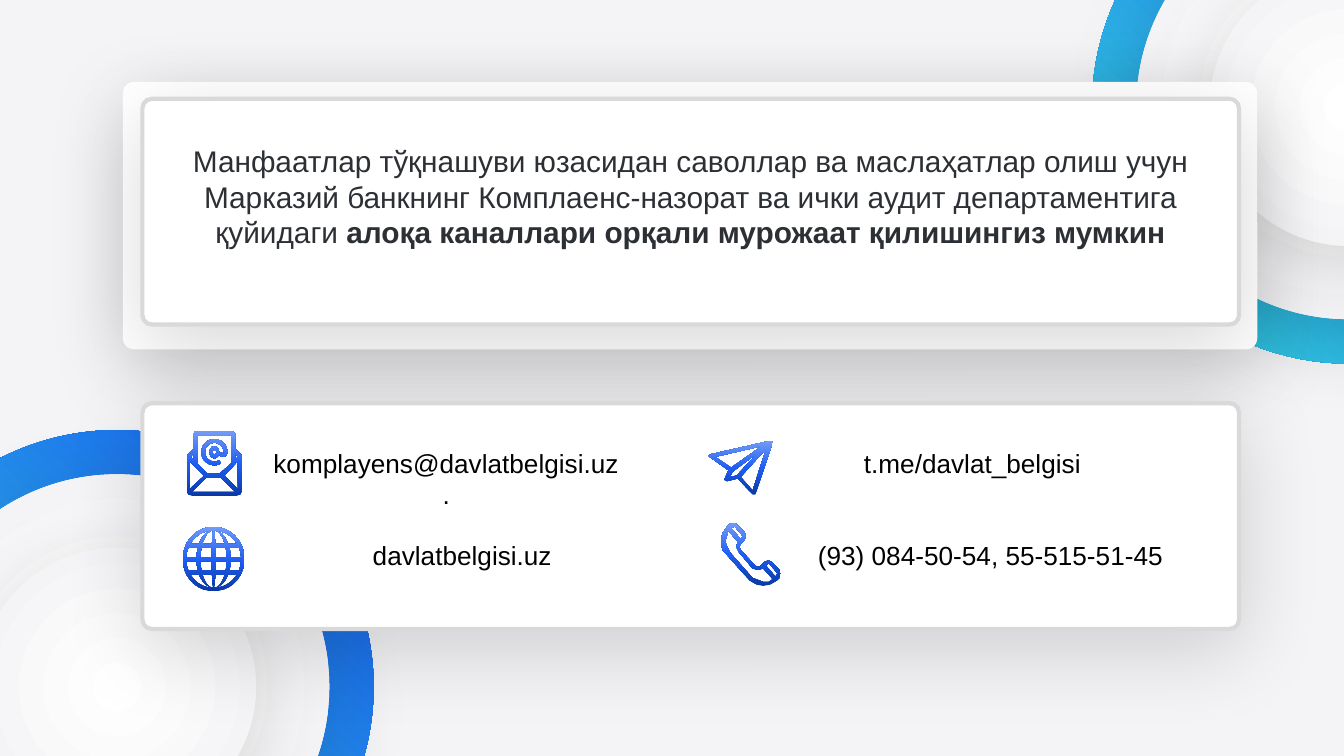
"""Build a contact slide with two panels, corner discs and four icons on a 0.01-inch grid."""
from dataclasses import dataclass
from itertools import product
from math import cos, radians, sin, sqrt

from pptx import Presentation, oxml
from pptx import util as u
from pptx.dml.color import RGBColor
from pptx.enum import shapes, text
from pptx.oxml import ns

COLORS = {
    "page": "F4F4F7", "white": "FFFFFF", "mist": "F0F0F3", "border": "D9D9D9",
    "blue": "1658F1", "cyan": "36DBE0", "navy": "0A39A6", "royal": "1D5DF1",
    "sky": "739BF7", "title": "2C3035", "black": "000000",
}
COLS, ROWS = 1000, 562.5
CELL = u.Inches(0.01)
Points = list[tuple[float, float]]


@dataclass
class Box:
    col: float
    row: float
    cols: float
    rows: float

    def emu(self) -> list[int]:
        return [round(v * CELL) for v in (self.col, self.row, self.cols, self.rows)]


@dataclass
class Disc:
    size: float
    stops: dict[int, str]
    radial: bool = True


@dataclass
class Contact:
    label: str
    box: Box
    icon: list[Points]
    wrap: bool = False


def arc(cx: float, cy: float, rx: float, ry: float, start: int = 0, end: int = 360) -> Points:
    steps = 36
    angles = [radians(start + (end - start) * i / steps) for i in range(steps + 1)]
    return [(cx + rx * cos(a), cy + ry * sin(a)) for a in angles]


def globe_cell(us: tuple[float, float], vs: tuple[float, float]) -> Points:
    ramp = [vs[0] + (vs[1] - vs[0]) * i / 8 for i in range(9)]
    edges = [(us[0], v) for v in ramp] + [(us[1], v) for v in reversed(ramp)]
    return [(159 + 20.5 * x * sqrt(1 - v * v), 416 + 21.5 * v) for x, v in edges]


MERIDIANS = [(-1, -0.62), (-0.48, -0.07), (0.07, 0.48), (0.62, 1)]
PARALLELS = [(-0.98, -0.53), (-0.4, -0.07), (0.07, 0.4), (0.53, 0.98)]
GLOBE = [arc(159, 416, 23, 24)] + [globe_cell(*c) for c in product(MERIDIANS, PARALLELS)]
AT_SIGN = [
    arc(159.5, 336.5, 9.7, 9.7, 60, 360) + arc(166, 337, 3, 3, 0, 180)
    + arc(166, 337, 0.8, 0.8, 180, 0) + arc(159.5, 336.5, 7, 7, 360, 60),
    arc(159.5, 336.5, 3.5, 4.5), arc(159.5, 336.5, 1.5, 1.7),
]
ENVELOPE = [
    [(145, 321), (173, 321), (175, 323), (175, 334), (180, 339), (180, 365), (179, 368),
     (176, 369), (143, 369), (140, 368), (139, 365), (139, 339), (144, 334), (144, 323)],
    [(144, 337), (144, 342), (142, 340)], [(175, 337), (177, 340), (175, 342)],
    [(172, 324), (172, 345), (164, 352), (154, 352), (147, 345), (147, 324)],
    [(141, 343), (152, 354), (141, 364)], [(177, 343), (177, 364), (167, 354)],
    [(164, 355), (175, 366), (143, 366), (154, 355)],
] + AT_SIGN
PLANE = [
    [(573, 328), (529, 338), (527, 339), (528, 340), (542, 350), (539, 357), (541, 358),
     (549, 356), (560, 368), (561, 368), (562, 368), (575, 329), (574.5, 328)],
    [(567, 332), (544, 348), (532, 340)], [(564, 337), (548, 354), (543, 355), (545, 351)],
    [(570, 334), (560, 365), (551, 355)],
]
PHONE = [
    [(546, 389), (543, 390), (541, 392), (537.5, 397), (536.5, 403), (537.5, 409), (541, 413),
     (558, 432), (563, 435), (568, 436), (573, 435), (578, 432), (580, 430), (581, 427),
     (580, 424), (574, 418), (572, 417), (569, 418), (566, 421), (564, 422), (562, 421),
     (551, 409), (550, 407), (551, 405), (554, 402), (555, 399), (554, 396), (548, 390)],
    [(546, 392), (547, 392), (552, 398), (553, 399), (551, 401), (544, 393)],
    [(572, 419), (573, 420), (578, 426), (578.5, 427), (577, 429), (570, 421)],
    [(542, 395), (549, 403), (548, 407), (550, 411), (560, 423), (564, 424), (568, 423),
     (575, 431), (572, 433), (568, 433), (560, 430), (543, 411), (539.5, 403)],
]

DISCS = [
    Disc(382, {0: "blue", 100: "cyan"}, radial=False),
    Disc(316, {0: "white", 100: "mist"}),
    Disc(207, {0: "white", 100: "mist"}),
]
DISC_CENTERS = [(1003.5, 79.5), (87, 511)]
CONTACTS = [
    Contact("komрlayens@davlatbelgisi.uz.", Box(191, 328, 282, 34), ENVELOPE, wrap=True),
    Contact("davlatbelgisi.uz", Box(267, 396.5, 154, 34), GLOBE),
    Contact("t.me/davlat_belgisi", Box(632.5, 328, 182, 34), PLANE),
    Contact("(93) 084-50-54, 55-515-51-45", Box(597.5, 396.5, 279, 34), PHONE, wrap=True),
]


def rgb(name: str) -> RGBColor:
    return RGBColor.from_string(COLORS[name])


def set_gradient(sp, stops: dict[int, str], angle: int = 0, radial: bool = False) -> None:
    sp.fill.background()
    gs = "".join(f'<a:gs pos="{pos * 1000}"><a:srgbClr val="{COLORS[c]}"/></a:gs>'
                 for pos, c in stops.items())
    shade = ('<a:path path="circle"><a:fillToRect l="50000" t="50000" r="50000" b="50000"/></a:path>'
             if radial else f'<a:lin ang="{angle * 60000}" scaled="0"/>')
    grad = oxml.parse_xml(f'<a:gradFill {ns.nsdecls("a")} rotWithShape="1">'
                          f'<a:gsLst>{gs}</a:gsLst>{shade}</a:gradFill>')
    sp_pr = sp.element.spPr
    sp_pr.replace(sp_pr.find(ns.qn("a:noFill")), grad)


def set_shadow(sp) -> None:
    sp.shadow.inherit = False
    sp.element.spPr.find(ns.qn("a:effectLst")).append(oxml.parse_xml(
        f'<a:outerShdw {ns.nsdecls("a")} blurRad="{u.Pt(45)}" dist="{u.Pt(11.2)}" '
        f'dir="{85 * 60000}" algn="t" rotWithShape="0"><a:srgbClr val="{COLORS["black"]}">'
        '<a:alpha val="15000"/></a:srgbClr></a:outerShdw>'))


def add_disc(s, center: tuple[float, float], disc: Disc) -> None:
    half = disc.size / 2
    box = Box(center[0] - half, center[1] - half, disc.size, disc.size)
    sp = s.shapes.add_shape(shapes.MSO_SHAPE.OVAL, *box.emu())
    sp.rotation = 90
    sp.line.fill.background()
    sp.shadow.inherit = False
    set_gradient(sp, disc.stops, angle=45, radial=disc.radial)
    if disc.radial:
        set_shadow(sp)


def add_panel(s, box: Box, bordered: bool = True):
    sp = s.shapes.add_shape(shapes.MSO_SHAPE.ROUNDED_RECTANGLE, *box.emu())
    sp.adjustments[0] = 0.042
    sp.fill.solid()
    sp.fill.fore_color.rgb = rgb("white")
    if bordered:
        sp.line.color.rgb = rgb("border")
        sp.line.width = u.Pt(2.25)
    else:
        sp.line.fill.background()
    set_shadow(sp)
    return sp


def add_icon(s, contours: list[Points]) -> None:
    outline, *holes = [[(x * CELL, y * CELL) for x, y in c] for c in contours]
    fb = s.shapes.build_freeform(*outline[0])
    fb.add_line_segments(outline[1:])
    for hole in holes:
        fb.move_to(*hole[0])
        fb.add_line_segments(hole[1:])
    sp = fb.convert_to_shape()
    sp.line.fill.background()
    sp.shadow.inherit = False
    set_gradient(sp, {0: "navy", 48: "royal", 100: "sky"}, angle=270)


def add_text(p, content: str, size: int = 14, color: str = "black", bold: bool = False) -> None:
    p.alignment = text.PP_ALIGN.CENTER
    r = p.add_run()
    r.text = content
    r.font.name = "Arial"
    r.font.size = u.Pt(size)
    r.font.bold = bold
    r.font.color.rgb = rgb(color)


def main() -> None:
    prs = Presentation()
    prs.slide_width, prs.slide_height = COLS * CELL, round(ROWS * CELL)
    s = prs.slides.add_slide(prs.slide_layouts[6])
    s.background.fill.solid()
    s.background.fill.fore_color.rgb = rgb("page")
    for center, disc in product(DISC_CENTERS, DISCS):
        add_disc(s, center, disc)
    add_panel(s, Box(91.5, 61, 844, 199), bordered=False)
    title, _ = [add_panel(s, Box(106, row, 816, 168)) for row in (73.5, 300)]
    tf = title.text_frame
    tf.word_wrap = True
    tf.vertical_anchor = text.MSO_ANCHOR.MIDDLE
    tf.margin_top = u.Inches(0.1)
    tf.margin_bottom = u.Inches(0.33)
    p = tf.paragraphs[0]
    add_text(p, "Манфаатлар тўқнашуви юзасидан саволлар ва маслаҳатлар олиш учун Марказий банкнинг "
             "Комплаенс-назорат ва ички аудит департаментига қуйидаги ", size=16, color="title")
    add_text(p, "алоқа каналлари орқали мурожаат қилишингиз мумкин", size=16, color="title", bold=True)
    for contact in CONTACTS:
        add_icon(s, contact.icon)
        tf = s.shapes.add_textbox(*contact.box.emu()).text_frame
        tf.word_wrap = contact.wrap
        tf.auto_size = text.MSO_AUTO_SIZE.SHAPE_TO_FIT_TEXT
        add_text(tf.paragraphs[0], contact.label)
    prs.save("out.pptx")


if __name__ == "__main__":
    main()
